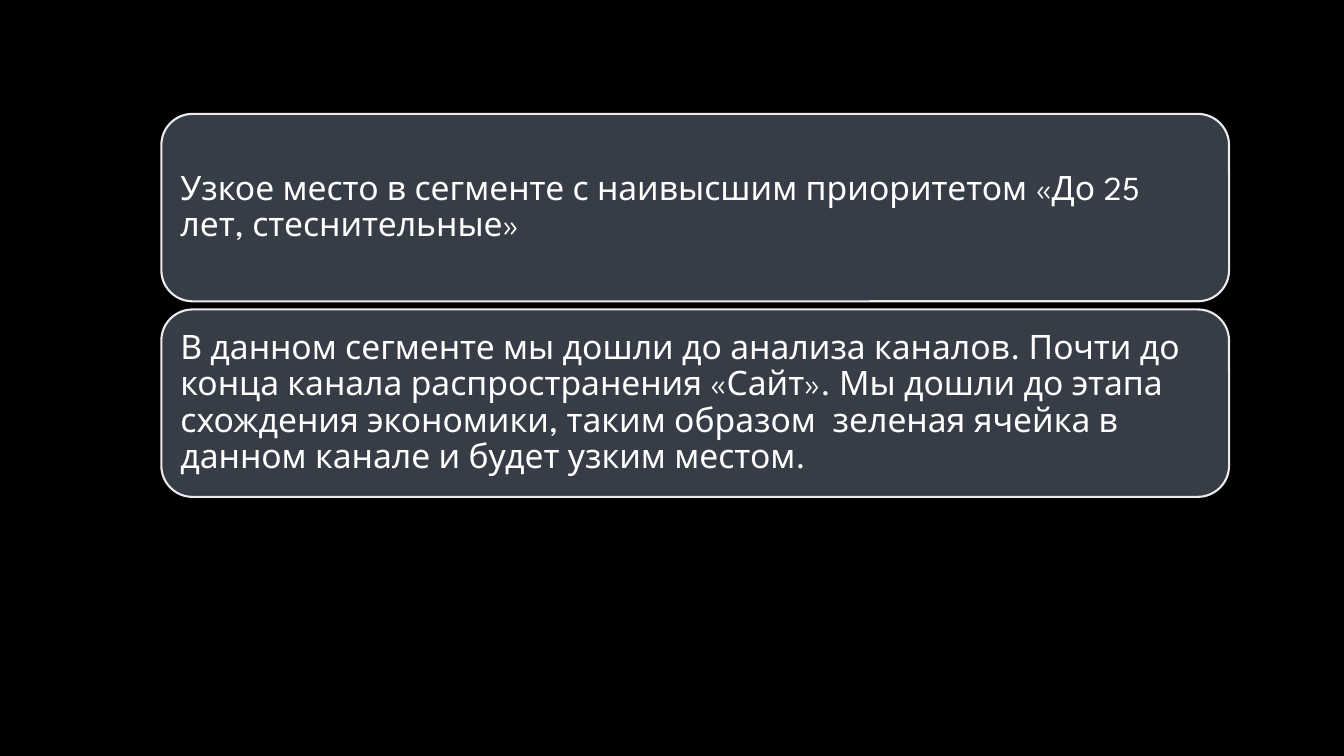
from pptx import Presentation
from pptx.dml.color import RGBColor
from pptx.enum.shapes import MSO_SHAPE
from pptx.enum.text import MSO_ANCHOR, PP_ALIGN
from pptx.util import Inches, Pt

ROUNDED = MSO_SHAPE.ROUNDED_RECTANGLE
MIDDLE = MSO_ANCHOR.MIDDLE
LEFT = PP_ALIGN.LEFT
BLANK_LAYOUT = 6

# Card column, in inches
CARD_LEFT, FIRST_TOP = 1.6, 1.13
CARD_WIDTH, CARD_HEIGHT, CARD_GAP = 10.59, 1.86, 0.08
INSET = 0.1

STATEMENTS = [
    "Узкое место в сегменте с наивысшим приоритетом «До 25 лет, стеснительные»",
    "В данном сегменте мы дошли до анализа каналов. Почти до конца канала "
    "распространения «Сайт». Мы дошли до этапа схождения экономики, таким "
    "образом  зеленая ячейка в данном канале и будет узким местом.",
]


def paint(color_format, hex_color):
    color_format.rgb = RGBColor.from_string(hex_color)


def fill_solid(fill, hex_color):
    fill.solid()
    paint(fill.fore_color, hex_color)


def add_card(page, row, text):
    """Place a rounded card with its statement in the given row."""
    top = FIRST_TOP + row * (CARD_HEIGHT + CARD_GAP)
    card = page.shapes.add_shape(
        ROUNDED, Inches(CARD_LEFT), Inches(top), Inches(CARD_WIDTH), Inches(CARD_HEIGHT)
    )
    card.shadow.inherit = False
    fill_solid(card.fill, "363D46")
    paint(card.line.color, "EBEBEB")
    card.line.width = Pt(1.5)

    # Statement
    frame = card.text_frame
    frame.word_wrap = True
    frame.vertical_anchor = MIDDLE
    frame.margin_left = frame.margin_right = Inches(INSET)
    frame.margin_top = frame.margin_bottom = Inches(INSET)
    para = frame.paragraphs[0]
    para.text = text
    para.alignment = LEFT
    para.line_spacing = 0.9
    para.space_after = Pt(8.4)
    para.font.name = "League Spartan"
    para.font.size = Pt(24)
    paint(para.font.color, "FFFFFF")


def main():
    deck = Presentation()
    deck.slide_width, deck.slide_height = Inches(13.33), Inches(7.5)
    page = deck.slides.add_slide(deck.slide_layouts[BLANK_LAYOUT])
    fill_solid(page.background.fill, "000000")

    # Stacked cards
    for row, text in enumerate(STATEMENTS):
        add_card(page, row, text)

    deck.save("out.pptx")


if __name__ == "__main__":
    main()
